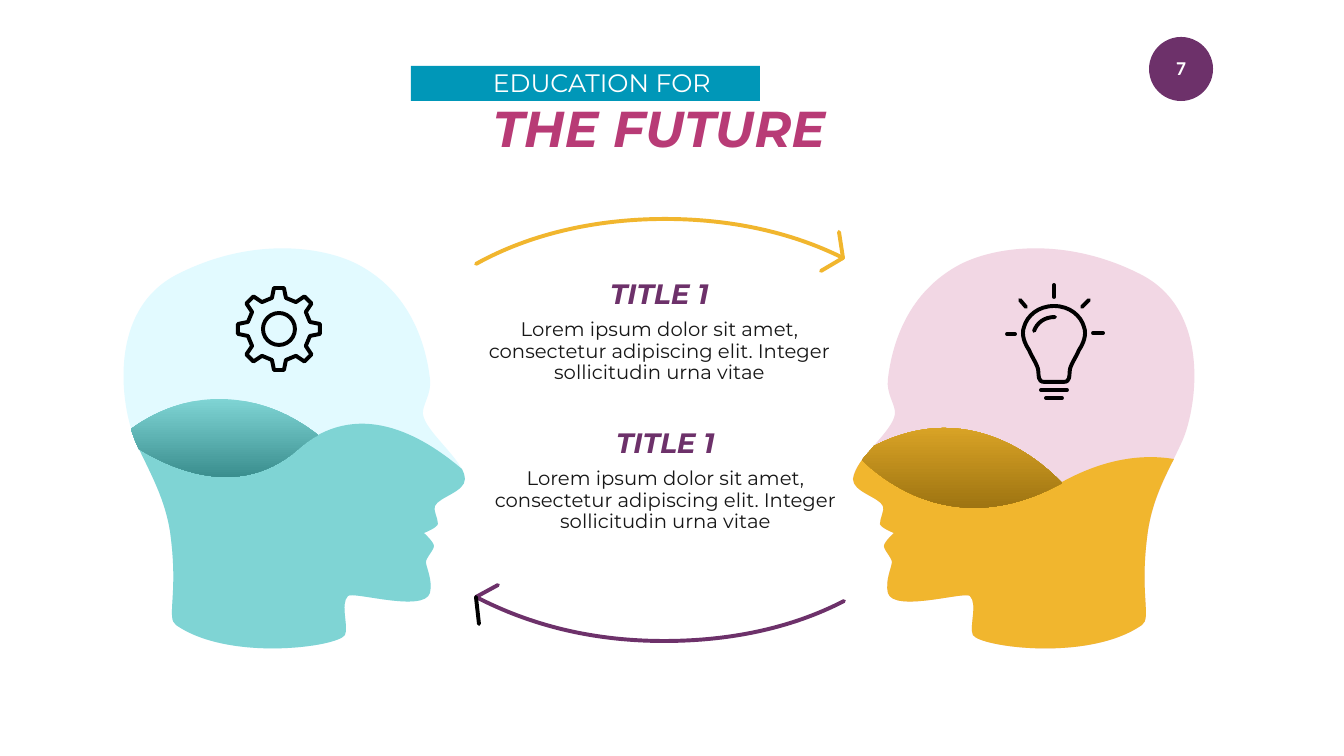
from math import cos, pi, sin

from lxml.etree import SubElement
from pptx import Presentation
from pptx.dml.color import RGBColor
from pptx.enum.shapes import MSO_SHAPE as SHAPE
from pptx.enum.text import MSO_ANCHOR as ANCHOR, PP_ALIGN as ALIGN
from pptx.oxml.ns import qn
from pptx.util import Pt

COLORS = {
    "purple": "6D316A", "magenta": "B83B76", "blue": "0097B8", "white": "FFFFFF",
    "ink": "171717", "black": "000000", "pink": "F2D7E4", "gold": "F1B62E",
    "brown": "866109", "ice": "E2FAFF", "teal": "7FD4D4", "pine": "2B7F7F",
}
PX = 9071
MIRROR = 1318
STROKE = 2.8

LOREM = "Lorem ipsum dolor sit amet, consectetur adipiscing elit. Integer sollicitudin urna vitae"
BLOCKS = [("TITLE 1", LOREM, 477, 275), ("TITLE 1", LOREM, 483, 424)]
HEADING = [("EDUCATION FOR", 18, "white", False, False), ("THE FUTURE", 36, "magenta", True, True)]

NOSE = (853, 479)
FACE = [
    (853, 492, 879, 497, 883, 506), (885, 510, 880, 518, 880, 524),
    (881, 528, 894, 533, 894, 533), (894, 533, 884, 542, 884, 546),
    (884, 550, 892, 558, 892, 562), (892, 567, 885, 580, 888, 593),
    (894, 613, 965, 591, 970, 596), (978, 604, 969, 627, 973, 635),
    (980, 647, 1089, 662, 1142, 625), (1152, 618, 1139, 594, 1148, 531),
]
CROWN = [
    (1153, 498, 1167, 474, 1181, 444), (1196, 414, 1214, 311, 1140, 274),
    (1069, 238, 999, 245, 961, 264), (907, 292, 892, 345, 888, 379),
    (886, 394, 896, 405, 895, 414), (893, 432, 854, 460, 853, 479),
]
RIGHT_WAVE = [
    (1152, 504, 1162, 482, 1174, 459), (1143, 454, 1106, 458, 1062, 482),
    (962, 539, 889, 486, 862, 460), (857, 467, 854, 473, 853, 479),
]
LEFT_WAVE = [
    (165, 500, 152, 476, 139, 449), (185, 477, 246, 494, 297, 450),
    (357, 397, 422, 435, 462, 469), (464, 473, 465, 476, 465, 479),
]
RIGHT_SHADE = [
    (874, 446), (870, 451, 866, 455, 862, 460),
    (889, 486, 961, 539, 1062, 483), (1044, 464, 971, 396, 874, 446),
]
LEFT_SHADE = [
    (318, 435), (310, 439, 304, 444, 297, 450), (246, 494, 185, 477, 139, 449),
    (135, 441, 133, 435, 131, 429), (153, 413, 183, 399, 219, 399),
    (262, 399, 295, 417, 318, 435),
]

GEAR_CENTER = (279, 329)
GEAR_TEETH = 8
TOOTH = [(-7, -31), (-5, -41), (5, -41), (7, -31)]
HUB_RADIUS = 16
BULB = [
    [(1045, 382), (1063, 382), (1068, 382, 1068, 380, 1069, 378),
     (1070, 374, 1069, 370, 1071, 366), (1073, 361, 1076, 357, 1079, 350),
     (1083, 344, 1087, 335, 1084, 327), (1081, 316, 1070, 306, 1054, 306),
     (1038, 306, 1027, 316, 1024, 327), (1021, 335, 1025, 344, 1029, 350),
     (1032, 357, 1035, 361, 1037, 366), (1039, 370, 1038, 374, 1039, 378),
     (1040, 380, 1040, 382, 1045, 382)],
    [(1046, 398), (1062, 398)], [(1041, 390), (1067, 390)],
    [(1007, 334), (1015, 334)], [(1093, 333), (1103, 333)],
    [(1054, 285), (1054, 297)], [(1082, 307), (1089, 300)],
    [(1020, 300), (1026, 307)],
    [(1034, 331), (1037, 323, 1044, 317, 1055, 317)],
]
ARROWS = [
    ("gold", [[(476, 264), (530, 234, 596, 219, 665, 219), (730, 219, 791, 232, 843, 258)],
              [(821, 271), (843, 258), (839, 232)]]),
    ("purple", [[(844, 601), (790, 629, 728, 641, 664, 641), (592, 641, 530, 625, 476, 597),
                 (498, 585)]]),
    ("black", [[(476, 597), (479, 624)]]),
]


def color(name):
    return RGBColor.from_string(COLORS[name])


def mirrored(outline):
    return [tuple(MIRROR - v if i % 2 == 0 else v for i, v in enumerate(step)) for step in outline]


def freeform(page, outlines, closed):
    builder = None
    for outline in outlines:
        points = [(step[i] * PX, step[i + 1] * PX) for step in outline for i in range(0, len(step), 2)]
        if builder is None:
            builder = page.shapes.build_freeform(*points[0], scale=1.0)
        else:
            builder.move_to(*points[0])
        builder.add_line_segments(points[1:], close=closed)
    shape = builder.convert_to_shape()
    shape.shadow.inherit = False
    segments = iter(list(shape.element.iter(qn("a:lnTo"))))
    for step in (step for outline in outlines for step in outline[1:]):
        curve = next(segments)
        if len(step) == 6:
            curve.tag = qn("a:cubicBezTo")
            for _ in range(2):
                segment = next(segments)
                curve.append(segment[0])
                segment.getparent().remove(segment)
    return shape


def solid(shape, name):
    shape.fill.solid()
    shape.fill.fore_color.rgb = color(name)
    shape.line.fill.background()


def shade(shape, start, end):
    shape.line.fill.background()
    shape.fill.gradient()
    shape.fill.gradient_angle = 270
    for stop, name, position in zip(shape.fill.gradient_stops, (start, end), (0, 1)):
        stop.color.rgb = color(name)
        stop.position = position


def stroke(shape, name):
    shape.fill.background()
    shape.line.color.rgb = color(name)
    shape.line.width = Pt(STROKE)
    line = shape.element.spPr.find(qn("a:ln"))
    line.set("cap", "rnd")
    SubElement(line, qn("a:round"))


def preset(page, kind, left, top, width, height):
    shape = page.shapes.add_shape(kind, *(v * PX for v in (left, top, width, height)))
    shape.shadow.inherit = False
    return shape


def write(page, frame, lines, font="Montserrat", align=ALIGN.CENTER, spacing=None, anchor=ANCHOR.TOP):
    box = page.shapes.add_textbox(*(v * PX for v in frame)).text_frame
    box.word_wrap = True
    box.vertical_anchor = anchor
    box.text = "\n".join(line[0] for line in lines)
    for para, (_, size, name, bold, italic) in zip(box.paragraphs, lines):
        para.alignment = align
        para.line_spacing = spacing
        span = para.runs[0].font
        span.name, span.size, span.bold, span.italic = font, Pt(size), bold, italic
        span.color.rgb = color(name)


def gear_outline():
    cx, cy = GEAR_CENTER
    turns = [2 * pi * k / GEAR_TEETH for k in range(GEAR_TEETH)]
    return [(cx + x * cos(a) - y * sin(a), cy + x * sin(a) + y * cos(a)) for a in turns for x, y in TOOTH]


def main():
    deck = Presentation()
    deck.slide_width, deck.slide_height = 1344 * PX, 756 * PX
    page = deck.slides.add_slide(deck.slide_layouts[6])

    solid(preset(page, SHAPE.OVAL, 1149, 37, 64, 64), "purple")
    write(page, (1145, 52, 72, 32), [("7", 14, "white", True, False)], "Calibri", anchor=ANCHOR.MIDDLE)

    head = [NOSE] + FACE + CROWN
    right_body = [NOSE] + FACE + RIGHT_WAVE
    left_body = mirrored([NOSE] + FACE) + LEFT_WAVE
    for outline, name in ((head, "pink"), (right_body, "gold"), (mirrored(head), "ice"), (left_body, "teal")):
        solid(freeform(page, [outline], True), name)
    shade(freeform(page, [RIGHT_SHADE], True), "gold", "brown")
    shade(freeform(page, [LEFT_SHADE], True), "teal", "pine")

    cx, cy = GEAR_CENTER
    stroke(freeform(page, [gear_outline()], True), "black")
    stroke(preset(page, SHAPE.OVAL, cx - HUB_RADIUS, cy - HUB_RADIUS, 2 * HUB_RADIUS, 2 * HUB_RADIUS), "black")
    stroke(freeform(page, BULB, False), "black")
    for name, outlines in ARROWS:
        stroke(freeform(page, outlines, False), name)

    for title, body, left, top in BLOCKS:
        write(page, (left, top + 40, 365, 92), [(body, 14, "ink", False, False)], spacing=0.9)
        write(page, (left + 93, top, 179, 37), [(title, 20, "purple", True, True)], spacing=0.9)

    solid(preset(page, SHAPE.RECTANGLE, 411, 66, 349, 35), "blue")
    write(page, (483, 62, 389, 102), HEADING, align=ALIGN.LEFT)
    deck.save("out.pptx")


if __name__ == "__main__":
    main()
